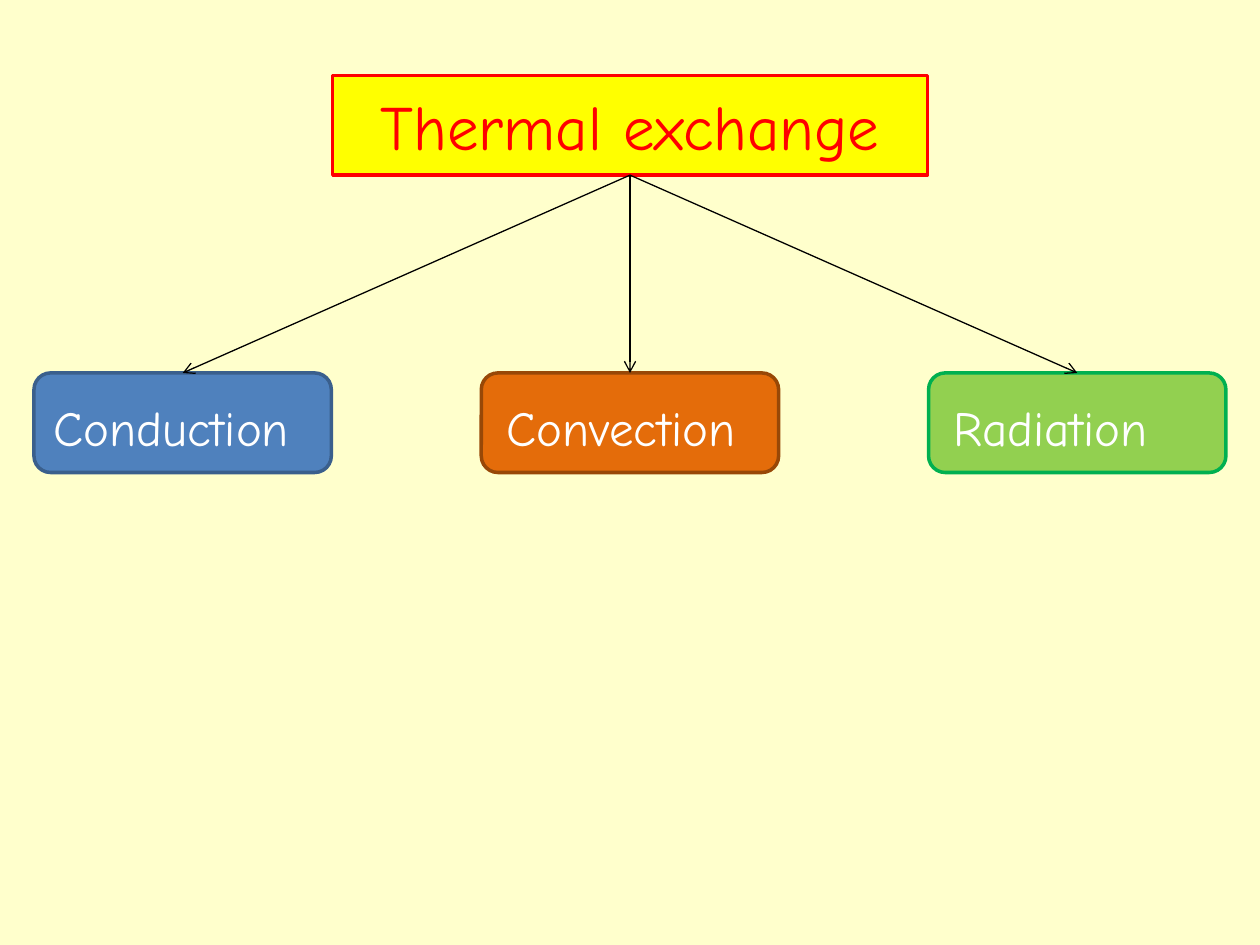
import pptx
import pptx.dml.color
import pptx.enum.shapes
import pptx.enum.text
import pptx.oxml
import pptx.oxml.ns
import pptx.util
from pptx.util import Inches

FONT = "Comic Neue"
BOX_HEIGHT = Inches(0.79)

# name, fill, outline, right inset that sets the word left of centre
BRANCHES = [
    ("Conduction", "4F81BD", "3A5F8C", Inches(0.18)),
    ("Convection", "E46C0A", "984807", Inches(0.14)),
    ("Radiation", "92D050", "00B050", Inches(0.42)),
]


def color(value):
    return pptx.dml.color.RGBColor.from_string(value)


def set_all(target, values):
    for name, value in values.items():
        setattr(target, name, value)


def add_xml(parent, tag, **attributes):
    element = pptx.oxml.parse_xml(f"<a:{tag} {pptx.oxml.ns.nsdecls('a')}/>")
    for name, value in attributes.items():
        element.set(name, value)
    parent.append(element)


def format_box(shape, text, fill, outline, font_color, size, insets):
    shape.fill.solid()
    shape.fill.fore_color.rgb = color(fill)
    shape.line.color.rgb = color(outline)
    shape.line.width = pptx.util.Pt(2)
    shape.shadow.inherit = False

    frame = shape.text_frame
    set_all(frame, {
        "text": text,
        "word_wrap": True,
        "auto_size": pptx.enum.text.MSO_AUTO_SIZE.NONE,
        "vertical_anchor": pptx.enum.text.MSO_ANCHOR.MIDDLE,
        **insets,
    })
    paragraph = frame.paragraphs[0]
    paragraph.alignment = pptx.enum.text.PP_ALIGN.CENTER
    font = paragraph.runs[0].font
    set_all(font, {"name": FONT, "size": pptx.util.Pt(size)})
    font.color.rgb = color(font_color)


def place_title(slide, left, top, width, height):
    title = slide.shapes.title
    set_all(title, {"left": left, "top": top, "width": width, "height": height})
    # Rounded outline for the title placeholder
    add_xml(title._element.spPr, "prstGeom", prst="roundRect")
    format_box(title, "Thermal exchange", "FFFF00", "FF0000", "FF0000", 36, {})
    return title


def add_arrow(slide, source, target):
    arrow = slide.shapes.add_connector(
        pptx.enum.shapes.MSO_CONNECTOR.STRAIGHT, 0, 0, 0, 0)
    arrow.begin_connect(source, 2)
    arrow.end_connect(target, 0)
    arrow.line.color.rgb = color("000000")
    arrow.line.width = pptx.util.Pt(0.75)
    add_xml(arrow.line._get_or_add_ln(), "tailEnd", type="arrow")
    add_xml(arrow._element.spPr, "effectLst")


def add_branches(slide, title, left, top, width, height):
    box_width = Inches(2.36)
    step = (width - box_width) // (len(BRANCHES) - 1)
    for index, (name, fill, outline, right_inset) in enumerate(BRANCHES):
        box = slide.shapes.add_shape(
            pptx.enum.shapes.MSO_SHAPE.ROUNDED_RECTANGLE,
            left + index * step, top, box_width, height)
        insets = {"margin_left": 0, "margin_right": right_inset,
                  "margin_top": Inches(0.12)}
        format_box(box, name, fill, outline, "FFFFFF", 28, insets)
        add_arrow(slide, title, box)


def main():
    presentation = pptx.Presentation()
    presentation.slide_width = Inches(10)
    presentation.slide_height = Inches(7.5)
    slide = presentation.slides.add_slide(presentation.slide_layouts[5])

    # Background
    slide.background.fill.solid()
    slide.background.fill.fore_color.rgb = color("FFFFCC")

    # Title with three branches below it
    title = place_title(slide, Inches(2.64), Inches(0.6), Inches(4.72), BOX_HEIGHT)
    add_branches(slide, title, Inches(0.27), Inches(2.96), Inches(9.46), BOX_HEIGHT)

    presentation.save("out.pptx")


if __name__ == "__main__":
    main()
